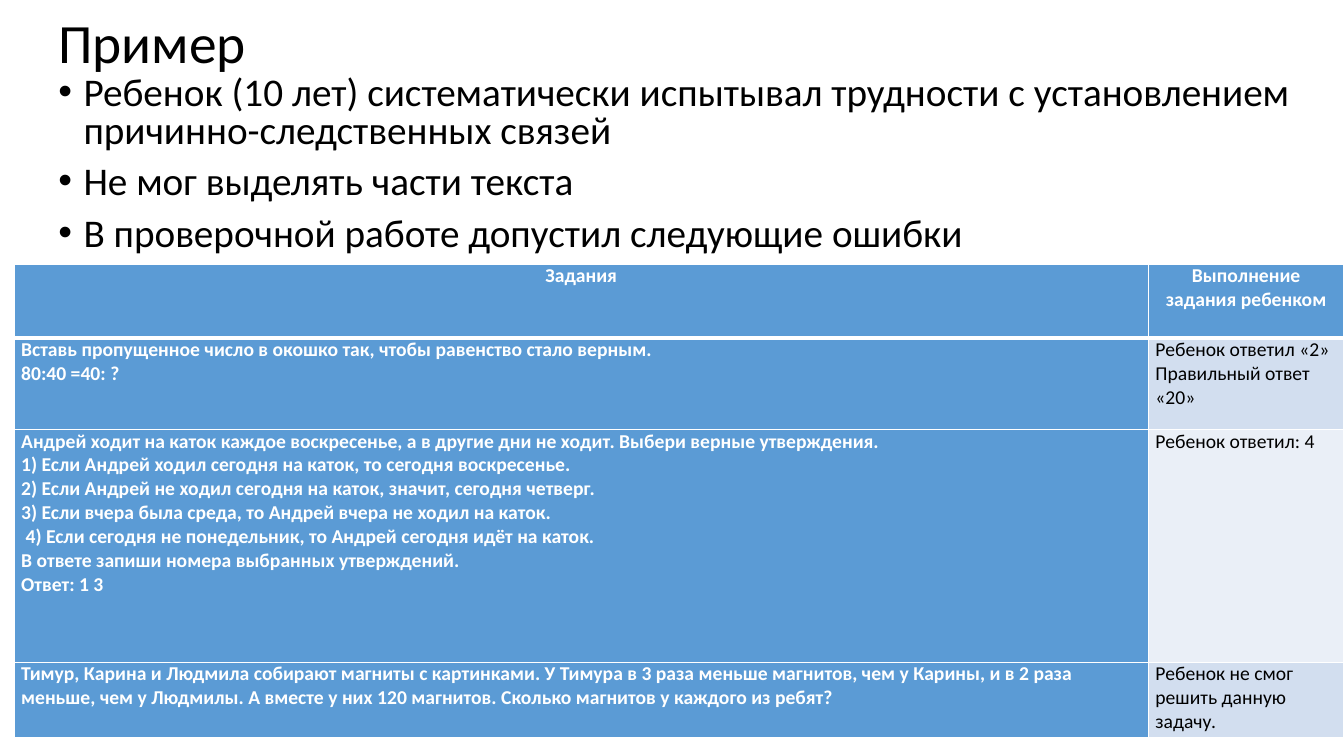
from lxml.etree import SubElement
from pptx import Presentation
from pptx.dml.color import RGBColor as RGB
from pptx.enum.text import MSO_ANCHOR as Anchor, PP_ALIGN as Align
from pptx.oxml.ns import qn
from pptx.util import Pt

PX = 9144  # 100 px to the inch
FONT = "Calibri"
BLACK = RGB(0x00, 0x00, 0x00)
WHITE = RGB(0xFF, 0xFF, 0xFF)
BLUE = RGB(0x5B, 0x9B, 0xD5)
BANDS = RGB(0xD2, 0xDE, 0xEF), RGB(0xEA, 0xEF, 0xF7)

COLS = 1125, 194
ROWS = 73, 91, 231, 75
POINTS = [
    "Ребенок (10 лет) систематически испытывал трудности с установлением причинно-следственных связей",
    "Не мог выделять части текста",
    "В проверочной работе допустил следующие ошибки",
]
TASKS = [
    (["Задания"], ["Выполнение задания ребенком"]),
    (
        [
            "Вставь пропущенное число в окошко так, чтобы равенство стало верным.",
            "80:40 =40: ?",
        ],
        ["Ребенок ответил «2»", "Правильный ответ «20»"],
    ),
    (
        [
            "Андрей ходит на каток каждое воскресенье, а в другие дни не ходит. Выбери верные утверждения.",
            "1) Если Андрей ходил сегодня на каток, то сегодня воскресенье.",
            "2) Если Андрей не ходил сегодня на каток, значит, сегодня четверг.",
            "3) Если вчера была среда, то Андрей вчера не ходил на каток.",
            " 4) Если сегодня не понедельник, то Андрей сегодня идёт на каток.",
            "В ответе запиши номера выбранных утверждений.",
            "Ответ: 1 3",
        ],
        ["Ребенок ответил: 4"],
    ),
    (
        [
            "Тимур, Карина и Людмила собирают магниты с картинками. У Тимура в 3 раза меньше магнитов, "
            "чем у Карины, и в 2 раза меньше, чем у Людмилы. А вместе у них 120 магнитов. "
            "Сколько магнитов у каждого из ребят?"
        ],
        ["Ребенок не смог решить данную задачу."],
    ),
]


def write(frame, lines, size, color=BLACK, bold=False, align=Align.LEFT,
          pitch=1.0, before=0, bullet=None):
    """Fill a text frame with one paragraph for each line."""
    frame.word_wrap = True
    for i, line in enumerate(lines):
        para = frame.add_paragraph() if i else frame.paragraphs[0]
        para.alignment = align
        para.line_spacing = pitch
        para.space_before = Pt(before)
        if bullet:
            props = para._p.get_or_add_pPr()
            props.set("marL", str(25 * PX))
            props.set("indent", str(-25 * PX))
            SubElement(props, qn("a:buFont"), typeface="Arial")
            SubElement(props, qn("a:buChar"), char=bullet)
        run = para.add_run()
        run.text = line
        font = run.font
        font.name, font.size, font.bold = FONT, Pt(size), bold
        font.color.rgb = color


def add_box(slide, x, y, w, h, lines, size, anchor=Anchor.TOP, **style):
    box = slide.shapes.add_textbox(x * PX, y * PX, w * PX, h * PX)
    box.text_frame.vertical_anchor = anchor
    write(box.text_frame, lines, size, **style)


def rule(cell, side, width):
    """Draw a white border on one side of a cell."""
    props = cell._tc.get_or_add_tcPr()
    line = SubElement(props, qn(f"a:ln{side}"), w=str(Pt(width)))
    fill = SubElement(line, qn("a:solidFill"))
    SubElement(fill, qn("a:srgbClr"), val=str(WHITE))


def add_grid(slide, x, y):
    frame = slide.shapes.add_table(
        len(ROWS), len(COLS), x * PX, y * PX, sum(COLS) * PX, sum(ROWS) * PX)
    table = frame.table
    for col, width in zip(table.columns, COLS):
        col.width = width * PX
    for r, (row, height) in enumerate(zip(table.rows, ROWS)):
        row.height = height * PX
        for c, cell in enumerate(row.cells):
            head = r == 0
            main = head or c == 0
            for side in "LRTB":
                thick = (head and side == "B") or (r == 1 and side == "T")
                rule(cell, side, 3 if thick else 1)
            cell.margin_left = cell.margin_right = 7 * PX
            cell.margin_top = cell.margin_bottom = 0
            cell.fill.solid()
            cell.fill.fore_color.rgb = BLUE if main else BANDS[(r - 1) % 2]
            write(cell.text_frame, TASKS[r][c], 14, bold=main,
                  color=WHITE if main else BLACK,
                  align=Align.CENTER if head else Align.LEFT)


def main():
    deck = Presentation()
    deck.slide_width, deck.slide_height = 1333 * PX, 750 * PX
    slide = deck.slides.add_slide(deck.slide_layouts[6])
    add_box(slide, 48, 11, 343, 69, ["Пример"], 39.6, Anchor.MIDDLE, pitch=0.9)
    add_box(slide, 48, 71, 1262, 191, POINTS, 28, pitch=0.8, before=10, bullet="•")
    add_grid(slide, 14, 262)
    deck.save("out.pptx")


if __name__ == "__main__":
    main()
